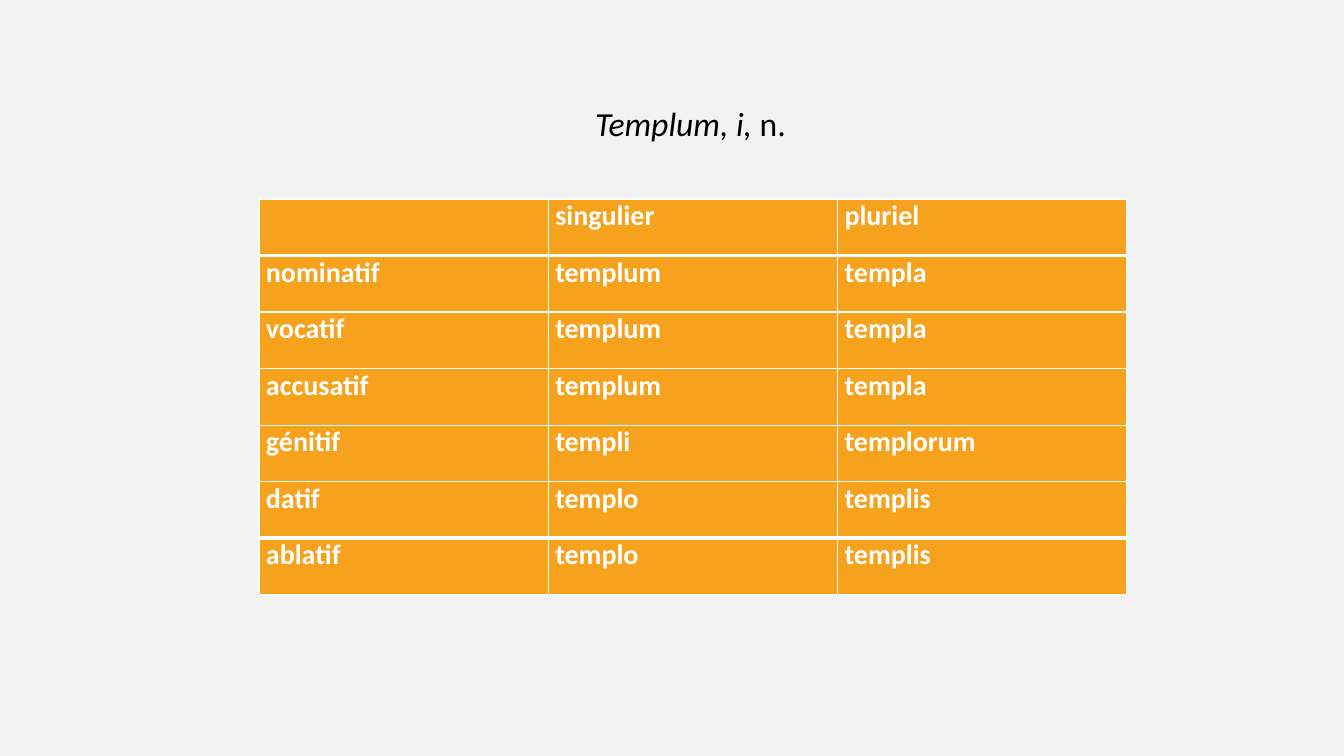
"""Build a slide with the declension table of a Latin noun."""
from lxml import etree
from pptx import Presentation
from pptx.dml.color import RGBColor
from pptx.enum.text import MSO_ANCHOR, PP_ALIGN
from pptx.oxml.ns import qn
from pptx.util import Emu, Pt

TOP, LEFT = MSO_ANCHOR.TOP, PP_ALIGN.LEFT
SLIDE = (1344, 756)
TITLE = [("Templum, i, ", True), ("n.", False)]
TITLE_BOX = (585, 98, 218, 50)
ROWS = [
    ("", "singulier", "pluriel"),
    ("nominatif", "templum", "templa"),
    ("vocatif", "templum", "templa"),
    ("accusatif", "templum", "templa"),
    ("génitif", "templi", "templorum"),
    ("datif", "templo", "templis"),
    ("ablatif", "templo", "templis"),
]
GRID_BOX = (259, 199, 868, 396)
PAD = 7
FONT = "Calibri"
PAPER, ORANGE, WHITE, BLACK = "F2F2F2", "F6A21D", "FFFFFF", "000000"
THIN, THICK = 1, 3


def px(num):
    return Emu(round(num * 914400 / 100.8))


def paint(fill, color):
    fill.solid()
    fill.fore_color.rgb = RGBColor.from_string(color)


def style(run, size, color, bold=False, slant=False):
    font = run.font
    font.name, font.size = FONT, Pt(size)
    font.bold, font.italic = bold, slant
    font.color.rgb = RGBColor.from_string(color)


def border(cell, sides):
    props = cell._tc.get_or_add_tcPr()
    for spot, (side, width) in enumerate(sides.items()):
        line = etree.Element(qn("a:ln" + side), w=str(Pt(width)))
        fill = etree.SubElement(line, qn("a:solidFill"))
        etree.SubElement(fill, qn("a:srgbClr"), val=WHITE)
        props.insert(spot, line)


def add_title(slide):
    title = slide.shapes.title
    title.left, title.top, title.width, title.height = map(px, TITLE_BOX)
    frame = title.text_frame
    frame.vertical_anchor, frame.word_wrap = TOP, False
    para = frame.paragraphs[0]
    para.alignment, para.line_spacing = LEFT, 1.0
    for text, slant in TITLE:
        run = para.add_run()
        run.text = text
        style(run, 24, BLACK, slant=slant)


def add_grid(slide):
    count, wide = len(ROWS), len(ROWS[0])
    shape = slide.shapes.add_table(count, wide, *map(px, GRID_BOX))
    table = shape.table
    for col in table.columns:
        col.width = px(GRID_BOX[2] / wide)
    heavy = {1, count - 1}
    for i, words in enumerate(ROWS):
        table.rows[i].height = px(GRID_BOX[3] / count)
        above, below = (THICK if edge in heavy else THIN for edge in (i, i + 1))
        for j, word in enumerate(words):
            cell = table.cell(i, j)
            cell.margin_left = cell.margin_right = px(PAD)
            cell.margin_top = cell.margin_bottom = 0
            cell.vertical_anchor = TOP
            paint(cell.fill, ORANGE)
            border(cell, {"L": THIN, "R": THIN, "T": above, "B": below})
            if word:
                cell.text_frame.text = word
                style(cell.text_frame.paragraphs[0].runs[0], 20, WHITE, bold=True)


def main():
    deck = Presentation()
    deck.slide_width, deck.slide_height = map(px, SLIDE)
    slide = deck.slides.add_slide(deck.slide_layouts[5])
    paint(slide.background.fill, PAPER)
    add_grid(slide)
    add_title(slide)
    deck.save("out.pptx")


if __name__ == "__main__":
    main()
